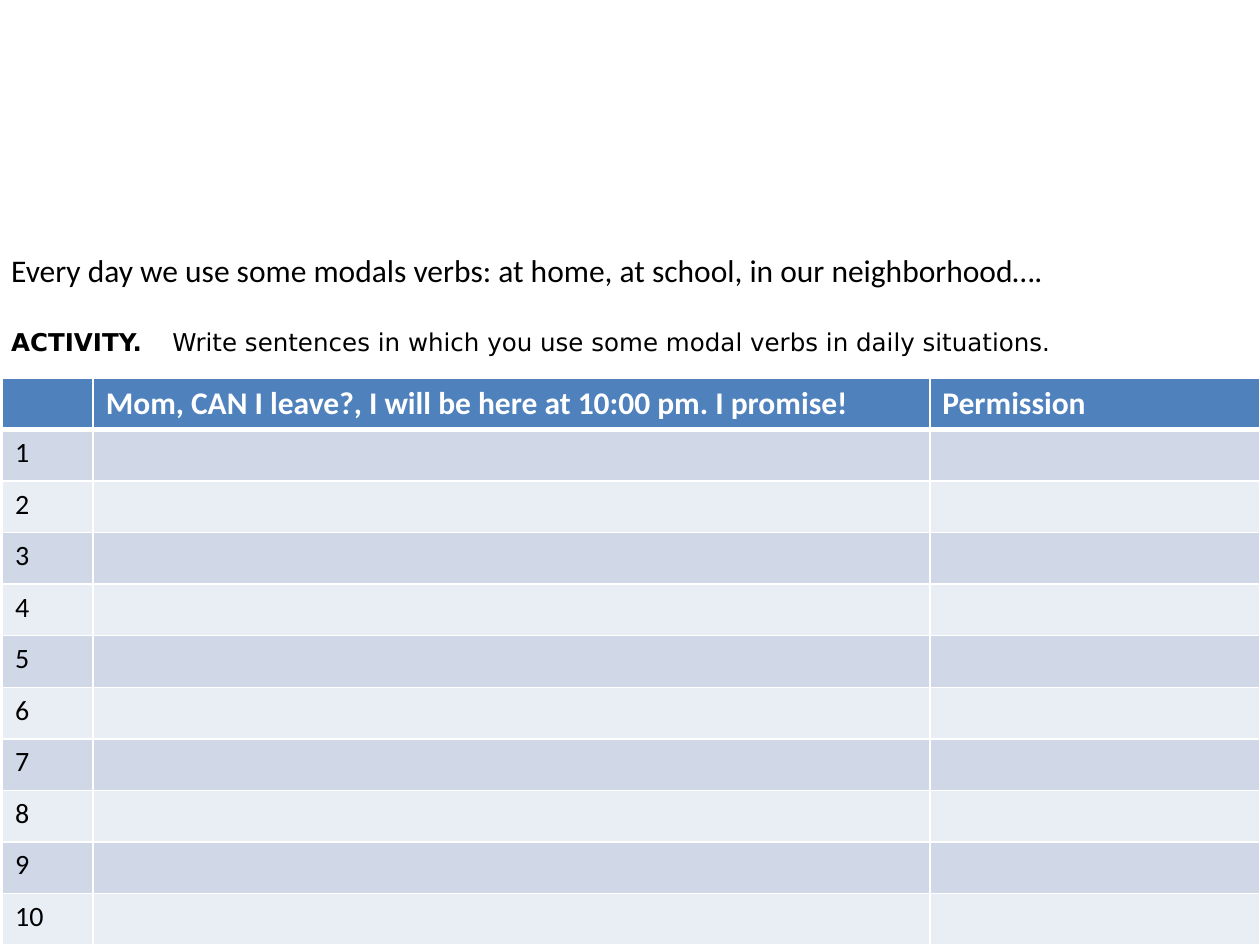
"""Build a worksheet slide on modal verbs."""
from dataclasses import dataclass

from lxml import etree
from pptx import Presentation
from pptx import util as u
from pptx.dml.color import RGBColor
from pptx.enum import text
from pptx.oxml.ns import qn


@dataclass(frozen=True)
class Theme:
    """Hold the colours, fonts and type sizes."""
    ink: str = "000000"
    paper: str = "FFFFFF"
    head: str = "4F81BD"
    bands: tuple = ("D0D8E8", "E9EDF4")
    sans: str = "Calibri"
    wide: str = "DejaVu Sans"
    large: int = 18
    mid: int = 16
    small: int = 14


class Sheet:
    """Draw on one slide with a grid of 100 columns and 100 rows."""

    def __init__(self, deck, theme):
        """Add a blank slide."""
        self.deck, self.theme = deck, theme
        self.slide = deck.slides.add_slide(deck.slide_layouts[6])

    def col(self, num):
        """Turn grid columns into a length."""
        return u.Emu(round(self.deck.slide_width * num / 100))

    def row(self, num):
        """Turn grid rows into a length."""
        return u.Emu(round(self.deck.slide_height * num / 100))

    def area(self, left, top, width, height):
        """Turn a grid area into four lengths."""
        return self.col(left), self.row(top), self.col(width), self.row(height)

    def style(self, font, size, color, face, bold=False):
        """Set a font."""
        font.size, font.name, font.bold = u.Pt(size), face, bold
        font.color.rgb = RGBColor.from_string(color)

    def intro(self, box, lead, label, task, tab, gap):
        """Add the lead line and the labelled task below it."""
        look = self.theme
        frame = self.slide.shapes.add_textbox(*self.area(*box)).text_frame
        frame.word_wrap = True
        frame.auto_size = text.MSO_AUTO_SIZE.SHAPE_TO_FIT_TEXT
        first, last = frame.paragraphs[0], frame.add_paragraph()
        first.text = lead
        self.style(first.font, look.large, look.ink, look.sans)
        last.space_before = u.Pt(gap)
        stops = etree.SubElement(last._p.get_or_add_pPr(), qn("a:tabLst"))
        etree.SubElement(stops, qn("a:tab"), pos=str(self.col(tab)), algn="l")
        for words, bold in ((label + "\t", True), (task, False)):
            run = last.add_run()
            run.text = words
            self.style(run.font, look.small, look.ink, look.wide, bold)

    def edge(self, cell, **widths):
        """Draw the four borders of a cell."""
        props = cell._tc.get_or_add_tcPr()
        for side in "LRTB":
            line = etree.SubElement(props, qn("a:ln" + side),
                                    w=str(u.Pt(widths.get(side, 1))))
            fill = etree.SubElement(line, qn("a:solidFill"))
            etree.SubElement(fill, qn("a:srgbClr"), val=self.theme.paper)

    def table(self, box, cols, data):
        """Add a table with a header row and banded rows."""
        look = self.theme
        grid = self.slide.shapes.add_table(
            len(data), len(cols), *self.area(*box)).table
        grid.horz_banding = False
        for col, width in zip(grid.columns, cols):
            col.width = self.col(width)
        for num, words in enumerate(data):
            head = num == 0
            edges = {"B": 3} if head else {"T": 3} if num == 1 else {}
            for cell, word in zip(grid.rows[num].cells, words):
                self.edge(cell, **edges)
                cell.fill.solid()
                cell.fill.fore_color.rgb = RGBColor.from_string(
                    look.head if head else look.bands[(num - 1) % 2])
                cell.text = word
                self.style(cell.text_frame.paragraphs[0].font,
                           look.large if head else look.mid,
                           look.paper if head else look.ink, look.sans, head)


def main():
    """Build and save the slide."""
    deck = Presentation()
    deck.slide_width, deck.slide_height = u.Inches(10), u.Inches(7.5)
    sheet = Sheet(deck, Theme())
    sheet.intro(
        (-0.1, 25.87, 100, 12.53),
        "Every day we use some modals verbs: at home, at school, "
        "in our neighborhood….",
        "ACTIVITY.",
        "Write sentences in which you use some modal verbs "
        "in daily situations.",
        tab=12.8, gap=22)
    head = ("", "Mom, CAN I leave?, I will be here at 10:00 pm. I promise!",
            "Permission")
    sheet.table((0.2, 40, 99.8, 60), (7.2, 66.4, 26.2),
                [head] + [(str(num), "", "") for num in range(1, 11)])
    deck.save("out.pptx")


if __name__ == "__main__":
    main()
